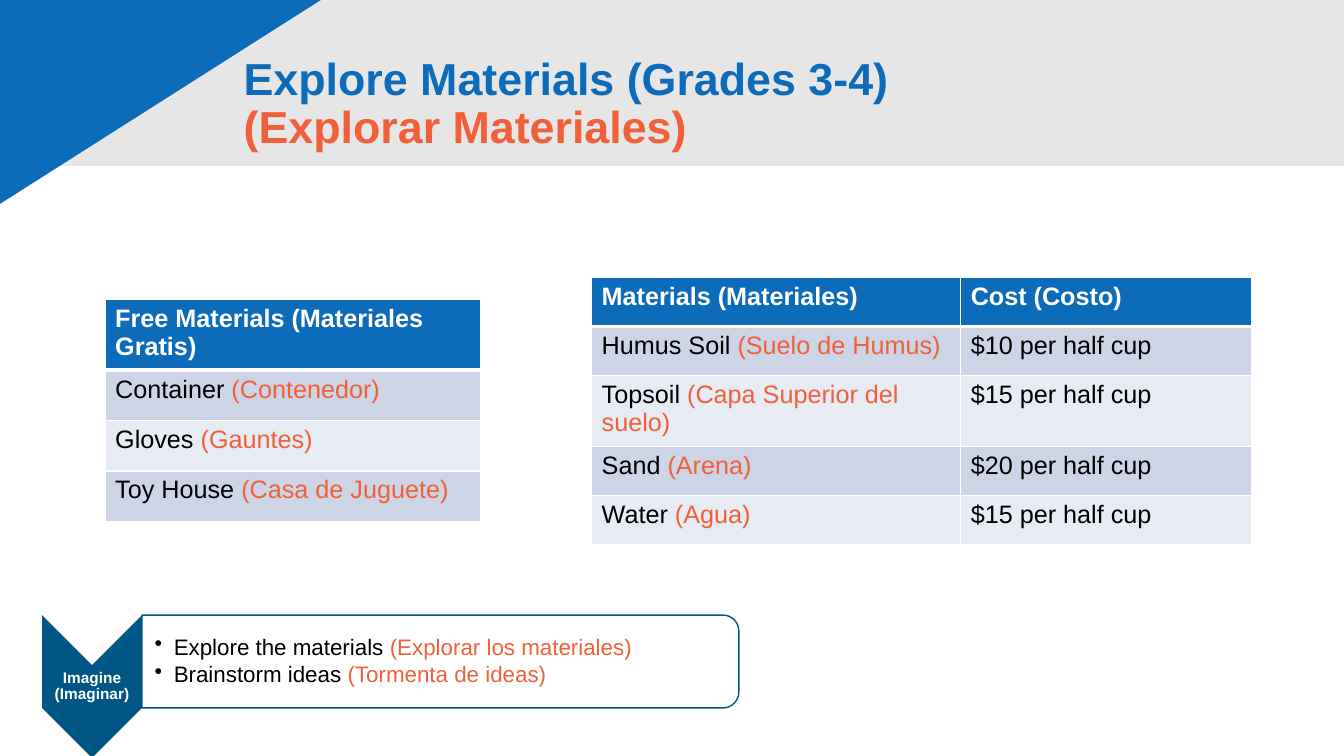
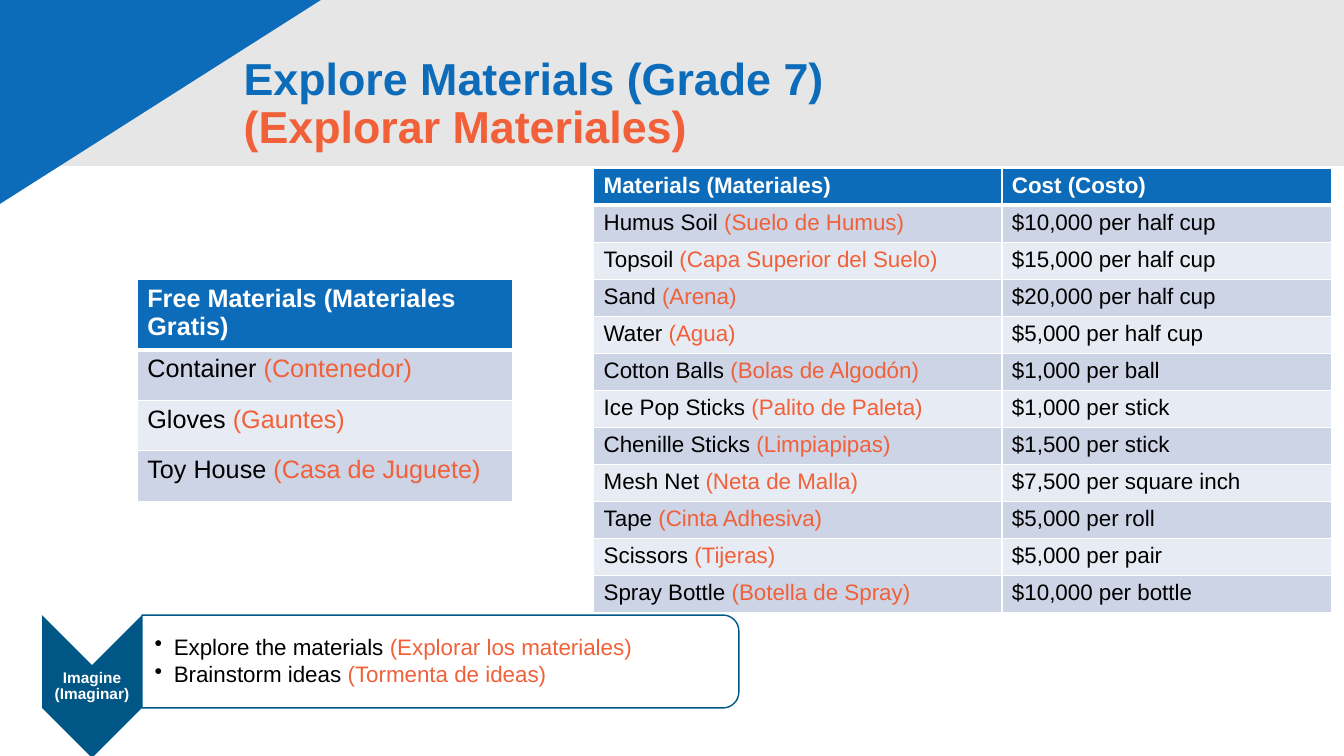
"""Builds two slides listing free and priced materials in English and Spanish."""
from math import cos, pi, sin

from lxml import etree
from pptx import Presentation
from pptx.dml.color import RGBColor
from pptx.enum.shapes import MSO_SHAPE
from pptx.enum.text import MSO_ANCHOR, PP_ALIGN
from pptx.oxml.ns import qn
from pptx.util import Cm, Pt

RECT, TRIANGLE = MSO_SHAPE.RECTANGLE, MSO_SHAPE.RIGHT_TRIANGLE
MIDDLE, CENTER = MSO_ANCHOR.MIDDLE, PP_ALIGN.CENTER

FONT = "Arial"
BLUE, NAVY, ORANGE = "0D6CB9", "005786", "F16038"
GREY, WHITE, BLACK = "E7E6E6", "FFFFFF", "000000"
BANDS = ("CCD4E6", "E7EBF3")

SLIDE_W, SLIDE_H = 33.87, 19.05
BAND_H = 4.18
CORNER_W, CORNER_H = 8.09, 5.14
STEP_X, STEP_Y, STEP_W, STEP_H, STEP_TIP = 1.06, 15.5, 2.52, 2.34, 1.26
PANEL_W, PANEL_R = 15.04, 0.4

TITLE_ES = "(Explorar Materiales)"
STEP = "Imagine (Imaginar)"
TASKS = [
    ("Explore the materials", "(Explorar los materiales)"),
    ("Brainstorm ideas", "(Tormenta de ideas)"),
]
FREE = [
    ["Free Materials (Materiales Gratis)"],
    [("Container", "(Contenedor)")],
    [("Gloves", "(Gauntes)")],
    [("Toy House", "(Casa de Juguete)")],
]
COST_HEAD = ["Materials (Materiales)", "Cost (Costo)"]
COSTS_3_4 = [
    COST_HEAD,
    [("Humus Soil", "(Suelo de Humus)"), "$10 per half cup"],
    [("Topsoil", "(Capa Superior del suelo)"), "$15 per half cup"],
    [("Sand", "(Arena)"), "$20 per half cup"],
    [("Water", "(Agua)"), "$15 per half cup"],
]
COSTS_7 = [
    COST_HEAD,
    [("Humus Soil", "(Suelo de Humus)"), "$10,000 per half cup"],
    [("Topsoil", "(Capa Superior del Suelo)"), "$15,000 per half cup"],
    [("Sand", "(Arena)"), "$20,000 per half cup"],
    [("Water", "(Agua)"), "$5,000 per half cup"],
    [("Cotton Balls", "(Bolas de Algodón)"), "$1,000 per ball"],
    [("Ice Pop Sticks", "(Palito de Paleta)"), "$1,000 per stick"],
    [("Chenille Sticks", "(Limpiapipas)"), "$1,500 per stick"],
    [("Mesh Net", "(Neta de Malla)"), "$7,500 per square inch"],
    [("Tape", "(Cinta Adhesiva)"), "$5,000 per roll"],
    [("Scissors", "(Tijeras)"), "$5,000 per pair"],
    [("Spray Bottle", "(Botella de Spray)"), "$10,000 per bottle"],
]
SLIDES = [
    {"title": "Explore Materials (Grades 3-4)", "tables": [
        {"rows": FREE, "at": (2.65, 7.55), "cols": [9.47], "row_h": 1.27, "size": 18},
        {"rows": COSTS_3_4, "at": (14.91, 6.99), "cols": [9.3, 7.34], "row_h": 1.24, "size": 18},
    ]},
    {"title": "Explore Materials (Grade 7)", "tables": [
        {"rows": FREE, "at": (3.46, 7.04), "cols": [9.47], "row_h": 1.27, "size": 18},
        {"rows": COSTS_7, "at": (14.96, 4.24), "cols": [10.29, 8.31], "row_h": 0.86, "size": 16},
    ]},
]


def rgb(value):
    """Return a colour from a hex string."""
    return RGBColor.from_string(value)


def set_all(obj, values):
    """Set attributes of an object from a dict."""
    for name, value in values.items():
        setattr(obj, name, value)


def paint(sp, fill, line=None):
    """Give a shape a flat fill and an optional thin outline."""
    sp.shadow.inherit = False
    sp.fill.solid()
    sp.fill.fore_color.rgb = rgb(fill)
    if line:
        sp.line.color.rgb = rgb(line)
        sp.line.width = Pt(1)
    else:
        sp.line.fill.background()


def add_run(p, text, size, color=BLACK, bold=False):
    """Append one formatted run."""
    r = p.add_run()
    r.text = text
    set_all(r.font, {"name": FONT, "size": Pt(size), "bold": bold})
    r.font.color.rgb = rgb(color)


def add_pair(p, pair, size):
    """Append English text followed by its Spanish version."""
    english, spanish = pair
    add_run(p, english + " ", size)
    add_run(p, spanish, size, ORANGE)


def frame(sp, left, top, right, bottom):
    """Return a wrapped, middle-anchored text frame with margins in cm."""
    tf = sp.text_frame
    set_all(tf, {"word_wrap": True, "vertical_anchor": MIDDLE,
                 "margin_left": Cm(left), "margin_top": Cm(top),
                 "margin_right": Cm(right), "margin_bottom": Cm(bottom)})
    return tf


def add_outline(s, points):
    """Draw a closed shape through points in cm."""
    points = [(Cm(x), Cm(y)) for x, y in points]
    builder = s.shapes.build_freeform(*points[0])
    builder.add_line_segments(points[1:], close=True)
    return builder.convert_to_shape()


def add_header(s, title):
    """Draw the grey band, blue corner and two-language title."""
    band = s.shapes.add_shape(RECT, 0, 0, Cm(SLIDE_W), Cm(BAND_H))
    paint(band, GREY)
    corner = s.shapes.add_shape(TRIANGLE, 0, 0, Cm(CORNER_W), Cm(CORNER_H))
    paint(corner, BLUE)
    corner._element.spPr.xfrm.set("flipV", "1")
    box = s.shapes.add_textbox(Cm(5.89), Cm(0.81), Cm(24.64), Cm(3.68))
    p = frame(box, 0.25, 0.13, 0.25, 0.13).paragraphs[0]
    p.line_spacing = 0.9
    add_run(p, title, 32, BLUE, True)
    p.add_line_break()
    add_run(p, TITLE_ES, 32, ORANGE, True)


def add_step(s):
    """Draw the downward chevron and its task panel."""
    left, mid, right = (STEP_X + STEP_W * k / 2 for k in range(3))
    top, bottom = STEP_Y, STEP_Y + STEP_H
    chevron = add_outline(s, [
        (left, top), (mid, top + STEP_TIP), (right, top),
        (right, bottom), (mid, bottom + STEP_TIP), (left, bottom)])
    paint(chevron, NAVY)
    p = frame(chevron, 0.02, 1.2, 0.02, 1.2).paragraphs[0]
    set_all(p, {"alignment": CENTER, "line_spacing": 0.9})
    add_run(p, STEP, 11, WHITE, True)

    edge = right + PANEL_W - PANEL_R
    arc = [(PANEL_R * sin(k * pi / 16), PANEL_R * cos(k * pi / 16)) for k in range(9)]
    upper = [(edge + x, top + PANEL_R - y) for x, y in arc]
    lower = [(edge + x, bottom - PANEL_R + y) for x, y in reversed(arc)]
    panel = add_outline(s, [(right, top), *upper, *lower, (right, bottom)])
    paint(panel, WHITE, NAVY)
    tf = frame(panel, 0.32, 0.13, 0.13, 0.13)
    for i, task in enumerate(TASKS):
        p = tf.add_paragraph() if i else tf.paragraphs[0]
        set_all(p, {"line_spacing": 0.9, "space_after": Pt(2.4), "alignment": PP_ALIGN.LEFT})
        pPr = p._p.get_or_add_pPr()
        pPr.set("marL", str(Cm(0.48)))
        pPr.set("indent", str(-Cm(0.48)))
        etree.SubElement(pPr, qn("a:buChar")).set("char", "•")
        add_pair(p, task, 16)


def add_borders(cell, row):
    """Rule a cell in white, thicker under the header row."""
    tcPr = cell._tc.get_or_add_tcPr()
    widths = {"L": 1, "R": 1, "T": 3 if row == 1 else 1, "B": 1 if row else 3}
    for side, width in widths.items():
        ln = etree.SubElement(tcPr, qn("a:ln" + side), w=str(Pt(width)))
        fill = etree.SubElement(ln, qn("a:solidFill"))
        etree.SubElement(fill, qn("a:srgbClr"), val=WHITE)


def add_materials(s, rows, at, cols, row_h, size):
    """Add a materials table with a blue header and banded rows."""
    x, y = at
    table = s.shapes.add_table(len(rows), len(cols), Cm(x), Cm(y),
                               Cm(sum(cols)), Cm(row_h * len(rows))).table
    for column, width in zip(table.columns, cols):
        column.width = Cm(width)
    for i, row in enumerate(rows):
        table.rows[i].height = Cm(row_h)
        for j, content in enumerate(row):
            cell = table.cell(i, j)
            add_borders(cell, i)
            cell.fill.solid()
            cell.fill.fore_color.rgb = rgb(BANDS[(i - 1) % 2] if i else BLUE)
            p = cell.text_frame.paragraphs[0]
            if isinstance(content, tuple):
                add_pair(p, content, size)
            else:
                add_run(p, content, size, BLACK if i else WHITE, i == 0)


def main():
    """Build and save the presentation."""
    prs = Presentation()
    set_all(prs, {"slide_width": Cm(SLIDE_W), "slide_height": Cm(SLIDE_H)})
    for content in SLIDES:
        s = prs.slides.add_slide(prs.slide_layouts[6])
        add_header(s, content["title"])
        add_step(s)
        for table in content["tables"]:
            add_materials(s, **table)
    prs.save("out.pptx")


if __name__ == "__main__":
    main()
